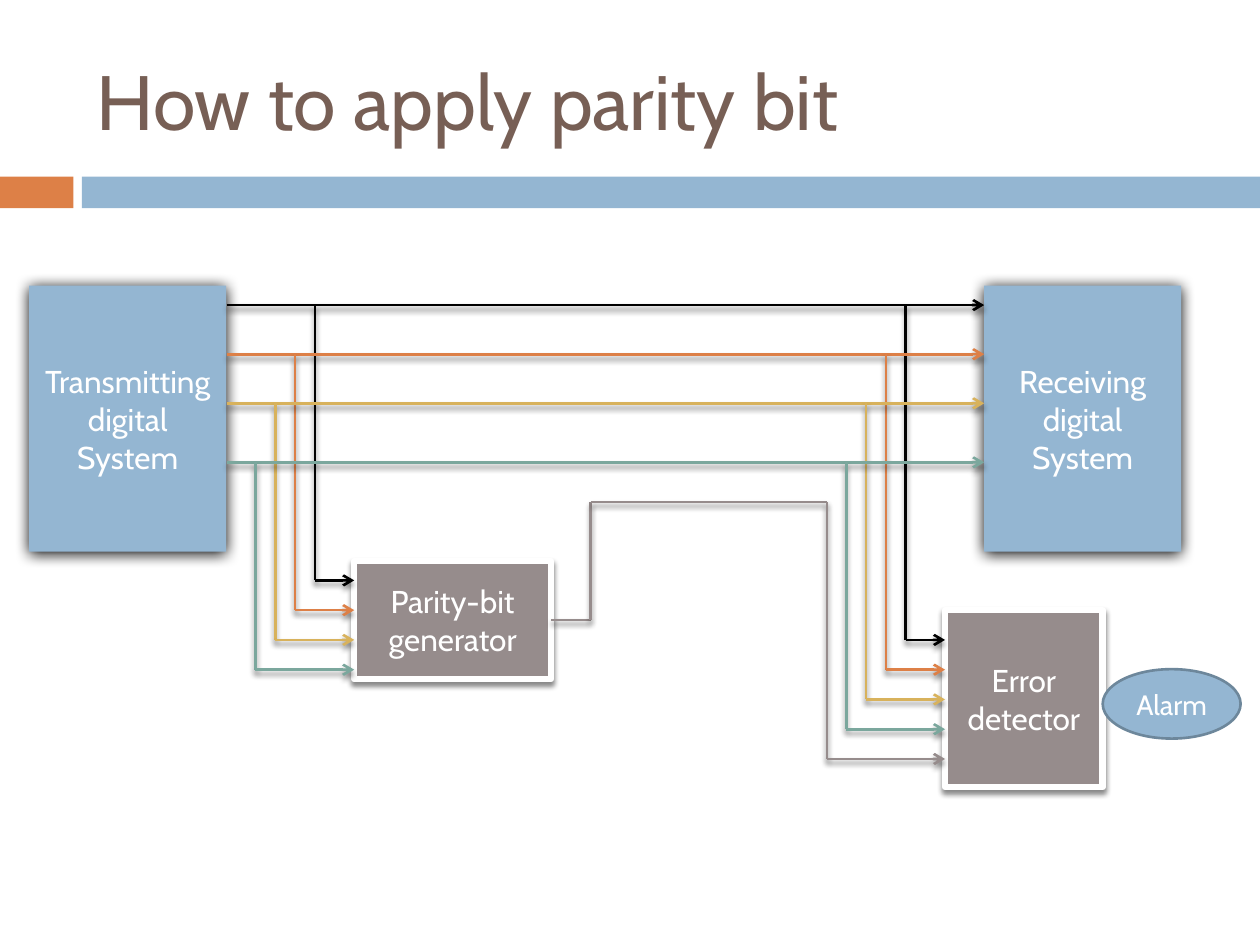
from lxml import etree
from pptx import Presentation
from pptx import util as u
from pptx.dml.color import RGBColor
from pptx.enum import shapes, text
from pptx.oxml.ns import qn

FONT = "Cabin"
BLUE, ORANGE, GRAY, WHITE = "94B6D2", "DD8047", "968C8C", "FFFFFF"
BROWN, EDGE = "775F55", "6D879B"

# Shadows: opacity in percent, blur and distance in points
GLOW = (100, 8.5, 1)
SOFT = (45, 3, 2.4)

# Lengths in centimetres
TITLE = ("How to apply parity bit", (1.7, 0.64, 22.66, 2.74))
BANDS = [((0, 3.56, 1.48, 0.64), ORANGE), ((1.65, 3.56, 23.75, 0.64), BLUE)]

# lines of text, place, fill, outline (colour, points), shadow, text size
BLOCKS = [
    (["Transmitting digital System"], (0.59, 5.76, 3.97, 5.36), BLUE, None, GLOW, 18),
    (["Receiving digital System"], (19.84, 5.76, 3.97, 5.36), BLUE, None, GLOW, 18),
    (["Parity-bit", "generator"], (7.14, 11.31, 3.97, 2.38), GRAY, (WHITE, 3.75), SOFT, 18),
    (["Error detector"], (19.05, 12.3, 3.18, 3.57), GRAY, (WHITE, 3.75), SOFT, 18),
    (["Alarm"], (22.23, 13.49, 2.78, 1.4), BLUE, (EDGE, 1.5), None, 16),
]

BUS_START, BUS_END = 4.57, 19.84
DATA_LINES = [("000000", 6.15), (ORANGE, 7.14), ("D8B25C", 8.13), ("7BA79D", 9.32)]
# first tap x, first input y, left edge of the block that is fed
TAPS = [(6.35, 11.7, 7.14), (18.26, 12.9, 19.05)]
TAP_STEP, INPUT_STEP = 0.4, 0.6
PARITY_ROUTE = [(11.11, 12.5), (11.91, 12.5), (11.91, 10.12),
                (16.67, 10.12), (16.67, 15.3), (19.05, 15.3)]


def color(value):
    return RGBColor.from_string(value)


def cm(values):
    return [u.Cm(value) for value in values]


def add_shadow(effects, opacity, blur, distance):
    outer = etree.SubElement(effects, qn("a:outerShdw"), blurRad=str(u.Pt(blur)),
                             dist=str(u.Pt(distance)), dir="5400000",
                             algn="ctr", rotWithShape="0")
    tint = etree.SubElement(outer, qn("a:srgbClr"), val="000000")
    etree.SubElement(tint, qn("a:alpha"), val=str(opacity * 1000))


def add_block(page, kind, place, fill, outline=None, shadow=None):
    block = page.shapes.add_shape(kind, *cm(place))
    block.fill.solid()
    block.fill.fore_color.rgb = color(fill)
    if outline:
        block.line.color.rgb = color(outline[0])
        block.line.width = u.Pt(outline[1])
    else:
        block.line.fill.background()
    block.shadow.inherit = False
    if shadow:
        add_shadow(block._element.spPr.find(qn("a:effectLst")), *shadow)
    return block


def write(box, lines, size, ink, align):
    frame = box.text_frame
    frame.word_wrap = True
    frame.vertical_anchor = text.MSO_ANCHOR.MIDDLE
    frame.text = "\n".join(lines)
    for para in frame.paragraphs:
        para.alignment = align
        para.font.name = FONT
        para.font.size = u.Pt(size)
        para.font.color.rgb = color(ink)


def add_wire(page, points, ink):
    """Join the points with straight pieces; the last one carries an arrowhead."""
    for start, end in zip(points, points[1:]):
        wire = page.shapes.add_connector(shapes.MSO_CONNECTOR.STRAIGHT, *cm(start + end))
        wire.line.color.rgb = color(ink)
        wire.line.width = u.Pt(1.5)
        properties = wire._element.spPr
        if end == points[-1]:
            etree.SubElement(properties.find(qn("a:ln")), qn("a:tailEnd"), type="arrow")
        add_shadow(etree.SubElement(properties, qn("a:effectLst")), *SOFT)


def main():
    deck = Presentation()
    deck.slide_width, deck.slide_height = u.Cm(25.4), u.Cm(19.05)
    page = deck.slides.add_slide(deck.slide_layouts[6])

    for place, fill in BANDS:
        add_block(page, shapes.MSO_SHAPE.RECTANGLE, place, fill)
    title, place = TITLE
    write(page.shapes.add_textbox(*cm(place)), [title], 44, BROWN, text.PP_ALIGN.LEFT)

    for lines, place, fill, outline, shadow, size in BLOCKS:
        kind = shapes.MSO_SHAPE.OVAL if lines == ["Alarm"] else shapes.MSO_SHAPE.RECTANGLE
        block = add_block(page, kind, place, fill, outline, shadow)
        write(block, lines, size, WHITE, text.PP_ALIGN.CENTER)

    for index, (ink, bus_y) in enumerate(DATA_LINES):
        add_wire(page, [(BUS_START, bus_y), (BUS_END, bus_y)], ink)
        for first_x, first_y, edge in TAPS:
            tap_x = first_x - index * TAP_STEP
            input_y = first_y + index * INPUT_STEP
            add_wire(page, [(tap_x, bus_y), (tap_x, input_y), (edge, input_y)], ink)
    add_wire(page, PARITY_ROUTE, GRAY)

    deck.save("out.pptx")


if __name__ == "__main__":
    main()
